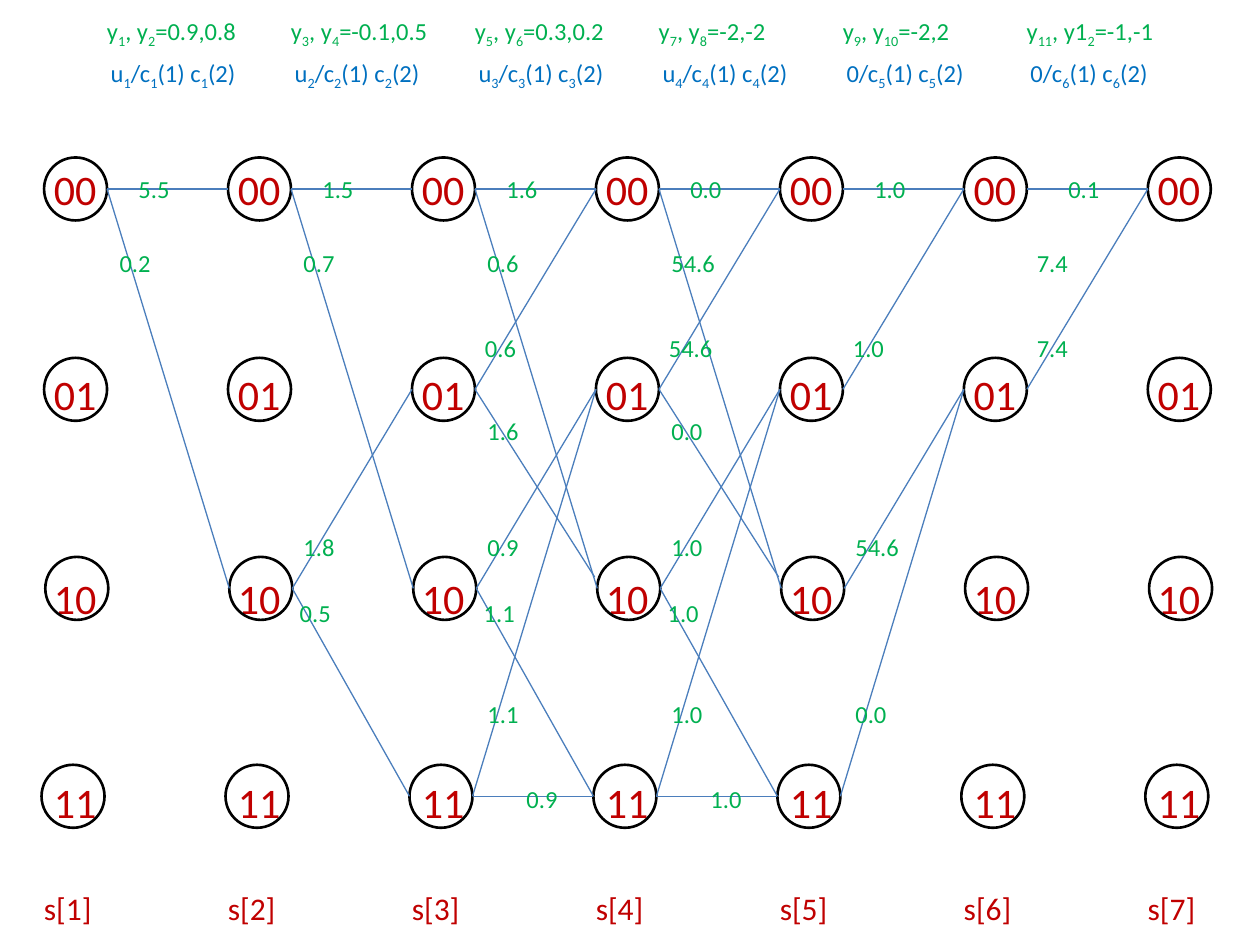
from pptx import Presentation
from pptx.dml.color import RGBColor
from pptx.enum.shapes import MSO_CONNECTOR, MSO_SHAPE
from pptx.enum.text import MSO_AUTO_SIZE
from pptx.oxml.ns import qn
from pptx.util import Inches, Pt

RED, GREEN, BLUE, BLACK, EDGE = "C00000", "00B050", "0070C0", "000000", "4B7EBC"

# Trellis grid: state -> (left offset inside the column, top of the circle)
STATES = {"00": (0.02, 1.25), "01": (0.02, 2.84), "10": (0.03, 4.42), "11": (0, 6.07)}
COLUMNS, LEFT, PITCH, DIAMETER = 7, 0.33, 1.46, 0.5

# Where the metric of each transition stands: (left offset, top)
METRIC_SPOTS = {
    ("00", "00"): (0.67, 1.33), ("00", "10"): (0.52, 1.92),
    ("01", "00"): (0.5, 2.59), ("01", "10"): (0.52, 3.25),
    ("10", "01"): (0.52, 4.17), ("10", "11"): (0.49, 4.7),
    ("11", "01"): (0.52, 5.5), ("11", "11"): (0.83, 6.17),
}
# Per stage: received values, width of their box, input, metrics by transition
STAGES = [
    ("y_1_, y_2_=0.9,0.8", 1.28, "u_1_",
     {("00", "00"): "5.5", ("00", "10"): "0.2"}),
    ("y_3_, y_4_=-0.1,0.5", 1.31, "u_2_",
     {("00", "00"): "1.5", ("00", "10"): "0.7",
      ("10", "01"): "1.8", ("10", "11"): "0.5"}),
    ("y_5_, y_6_=0.3,0.2", 1.25, "u_3_",
     {("00", "00"): "1.6", ("00", "10"): "0.6", ("01", "00"): "0.6", ("01", "10"): "1.6",
      ("10", "01"): "0.9", ("10", "11"): "1.1", ("11", "01"): "1.1", ("11", "11"): "0.9"}),
    ("y_7_, y_8_=-2,-2", 1.07, "u_4_",
     {("00", "00"): "0.0", ("00", "10"): "54.6", ("01", "00"): "54.6", ("01", "10"): "0.0",
      ("10", "01"): "1.0", ("10", "11"): "1.0", ("11", "01"): "1.0", ("11", "11"): "1.0"}),
    ("y_9_, y_10_=-2,2", 1.08, "0",
     {("00", "00"): "1.0", ("01", "00"): "1.0", ("10", "01"): "54.6", ("11", "01"): "0.0"}),
    ("y_11_, y1_2_=-1,-1", 1.24, "0",
     {("00", "00"): "0.1", ("01", "00"): "7.4"}),
]


def rgb(color):
    return RGBColor.from_string(color)


def column_x(column):
    return LEFT + PITCH * column


def add_text(s, x, y, w, h, lines, size, color, gap=0):
    """Add one paragraph per line; text between underscores is subscript."""
    tf = s.shapes.add_textbox(Inches(x), Inches(y), Inches(w), Inches(h)).text_frame
    tf.word_wrap = False
    tf.auto_size = MSO_AUTO_SIZE.SHAPE_TO_FIT_TEXT
    for i, line in enumerate(lines):
        p = tf.add_paragraph() if i else tf.paragraphs[0]
        p.space_before = Pt(gap if i else 0)
        for j, part in enumerate(line.split("_")):
            if not part:
                continue
            r = p.add_run()
            r.text = part
            for name, value in {"name": "Calibri", "size": Pt(size)}.items():
                setattr(r.font, name, value)
            r.font.color.rgb = rgb(color)
            if j % 2:
                r._r.get_or_add_rPr().set("baseline", "-25000")


def add_circle(s, column, state):
    dx, y = STATES[state]
    sp = s.shapes.add_shape(MSO_SHAPE.OVAL, Inches(column_x(column) + dx), Inches(y),
                            Inches(DIAMETER), Inches(DIAMETER))
    sp.shadow.inherit = False
    sp.fill.background()
    sp.line.color.rgb = rgb(BLACK)
    sp.line.width = Pt(1.5)


def add_transition(s, column, start, end):
    """Draw from the right of one circle to the left of one in the next column."""
    (dx1, y1), (dx2, y2) = STATES[start], STATES[end]
    radius = DIAMETER / 2
    if (start, end) == ("01", "10"):  # this one meets the circle a little higher
        dx2, y2 = dx2 - 0.02, y2 - 0.09
    line = s.shapes.add_connector(
        MSO_CONNECTOR.STRAIGHT,
        Inches(column_x(column) + dx1 + DIAMETER), Inches(y1 + radius),
        Inches(column_x(column + 1) + dx2), Inches(y2 + radius))
    line.line.color.rgb = rgb(EDGE)
    line.line.width = Pt(0.75)
    sp_pr = line._element.spPr
    sp_pr.append(sp_pr.makeelement(qn("a:effectLst"), {}))


def add_metric(s, x, y, value):
    add_text(s, x, y, 0.55 if len(value) > 3 else 0.45, 0.34, [value], 14, GREEN)


def add_column(s, column):
    x = column_x(column)
    add_text(s, x, 1.25, 0.54, 5.35, STATES, 24, RED, gap=88)
    for state in STATES:
        add_circle(s, column, state)
    add_text(s, x - 0.08, 7.01, 0.58, 0.4, [f"s[{column + 1}]"], 18, RED)


def add_stage(s, column, received, width, symbol, metrics):
    x, n = column_x(column), column + 1
    add_text(s, x + 0.42, 0.08, width, 0.34, [received], 14, GREEN)
    add_text(s, x + 0.45, 0.41, 1.15 if symbol == "0" else 1.22, 0.34,
             [f"{symbol}/c_{n}_(1) c_{n}_(2)"], 14, BLUE)
    for (start, end), value in metrics.items():
        add_transition(s, column, start, end)
        dx, y = METRIC_SPOTS[start, end]
        if value == "0.1":
            dx += 0.08
        add_metric(s, x + dx, y, value)


def main():
    prs = Presentation()
    prs.slide_width, prs.slide_height = Inches(10), Inches(7.5)
    s = prs.slides.add_slide(prs.slide_layouts[6])
    for column in range(COLUMNS):
        add_column(s, column)
    for column, stage in enumerate(STAGES):
        add_stage(s, column, *stage)
    add_metric(s, column_x(5) + 0.5, 1.92, "7.4")
    prs.save("out.pptx")


if __name__ == "__main__":
    main()
